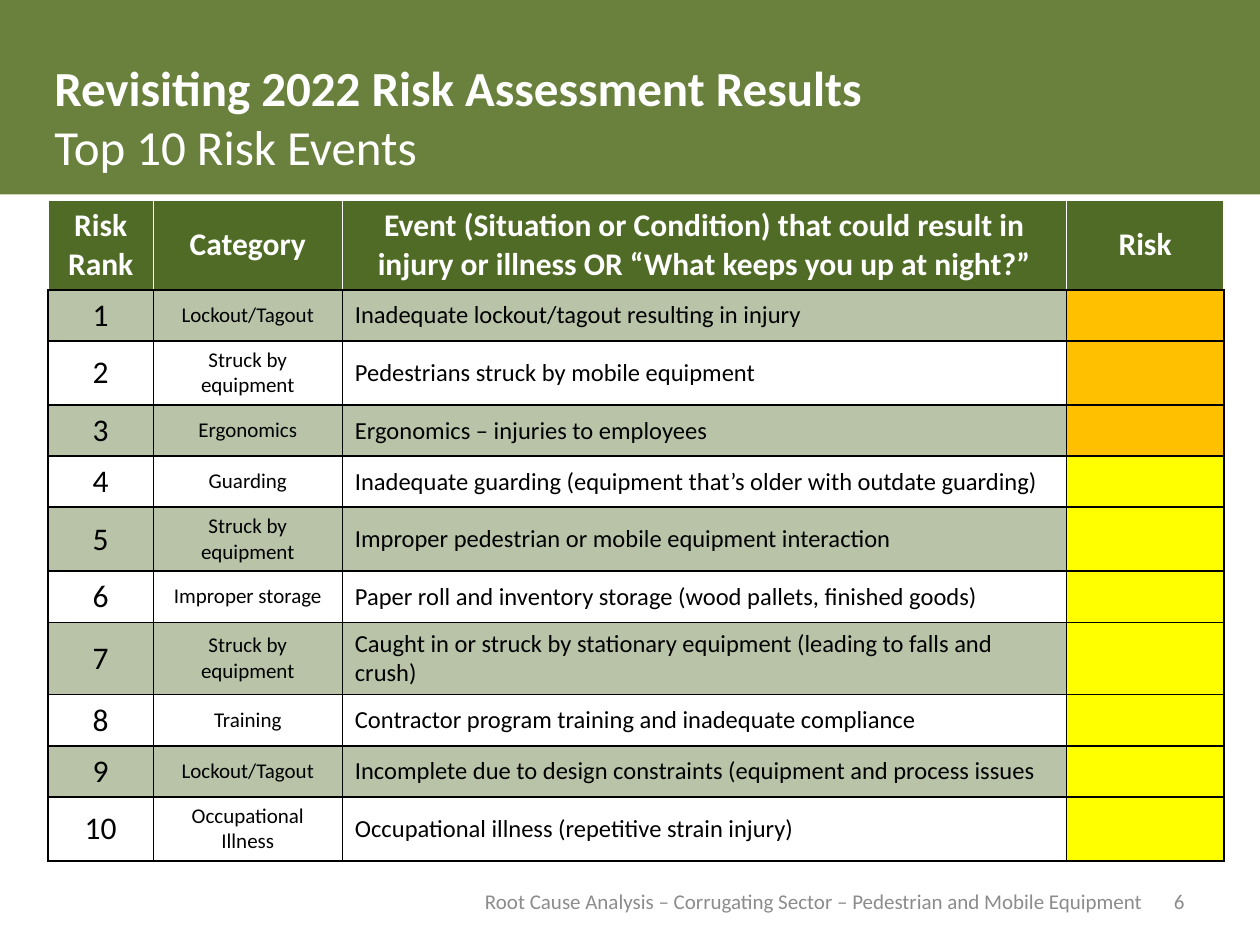
from dataclasses import dataclass

from lxml import etree
from pptx import Presentation
from pptx.dml.color import RGBColor
from pptx.enum import shapes, text
from pptx.oxml import ns
from pptx.util import Cm, Pt

FONT = "Calibri"
WHITE = RGBColor(0xFF, 0xFF, 0xFF)
BLACK = RGBColor(0x00, 0x00, 0x00)
GRAY = RGBColor(0x8C, 0x8C, 0x8C)
BAND_GREEN = RGBColor(0x69, 0x81, 0x3C)
TABLE_GREEN = RGBColor(0x50, 0x6B, 0x26)
ORANGE = RGBColor(0xFF, 0xC0, 0x00)
YELLOW = RGBColor(0xFF, 0xFF, 0x00)

CENTER = text.PP_ALIGN.CENTER
LEFT = text.PP_ALIGN.LEFT
RIGHT = text.PP_ALIGN.RIGHT

COLUMN_WIDTHS = (2.12, 3.81, 14.6, 3.17)
HEADER_HEIGHT = 1.8
ROW_HEIGHT = 1.03
TWO_LINE_HEIGHT = 1.29
HEADINGS = (
    "Risk Rank",
    "Category",
    "Event (Situation or Condition) that could result in injury or illness "
    "OR “What keeps you up at night?”",
    "Risk",
)


@dataclass(frozen=True)
class RiskEvent:
    category: str
    event: str
    level: RGBColor = YELLOW
    height: float = ROW_HEIGHT


EVENTS = (
    RiskEvent("Lockout/Tagout", "Inadequate lockout/tagout resulting in injury", ORANGE),
    RiskEvent("Struck by equipment", "Pedestrians struck by mobile equipment",
              ORANGE, TWO_LINE_HEIGHT),
    RiskEvent("Ergonomics", "Ergonomics – injuries to employees", ORANGE),
    RiskEvent("Guarding", "Inadequate guarding (equipment that’s older with outdate guarding)"),
    RiskEvent("Struck by equipment", "Improper pedestrian or mobile equipment interaction",
              height=TWO_LINE_HEIGHT),
    RiskEvent("Improper storage", "Paper roll and inventory storage (wood pallets, finished goods)"),
    RiskEvent("Struck by equipment",
              "Caught in or struck by stationary equipment (leading to falls and crush)",
              height=1.46),
    RiskEvent("Training", "Contractor program training and inadequate compliance"),
    RiskEvent("Lockout/Tagout", "Incomplete due to design constraints (equipment and process issues"),
    RiskEvent("Occupational Illness", "Occupational illness (repetitive strain injury)",
              height=TWO_LINE_HEIGHT),
)


def style_text(frame, size: float, color: RGBColor, align, bold: bool = False) -> None:
    for paragraph in frame.paragraphs:
        paragraph.alignment = align
        for run in paragraph.runs:
            run.font.name = FONT
            run.font.size = Pt(size)
            run.font.bold = bold
            run.font.color.rgb = color


def set_borders(cell, sides: RGBColor, top: RGBColor, bottom: RGBColor) -> None:
    properties = cell._tc.get_or_add_tcPr()
    edges = {"a:lnL": sides, "a:lnR": sides, "a:lnT": top, "a:lnB": bottom}
    for position, (tag, color) in enumerate(edges.items()):
        line = etree.Element(ns.qn(tag), w=str(Pt(1)))
        fill = etree.SubElement(line, ns.qn("a:solidFill"))
        etree.SubElement(fill, ns.qn("a:srgbClr"), val=str(color))
        properties.insert(position, line)


def fill_cell(cell, color: RGBColor, opacity: int = 100) -> None:
    cell.fill.solid()
    cell.fill.fore_color.rgb = color
    if opacity < 100:
        swatch = cell._tc.tcPr.find(".//" + ns.qn("a:srgbClr"))
        etree.SubElement(swatch, ns.qn("a:alpha"), val=str(opacity * 1000))


def write_cell(cell, words: str, size: float, color: RGBColor, align, bold: bool = False) -> None:
    cell.text_frame.text = words
    cell.vertical_anchor = text.MSO_ANCHOR.MIDDLE
    style_text(cell.text_frame, size, color, align, bold)


def add_title(slide) -> None:
    band = slide.shapes.add_shape(
        shapes.MSO_SHAPE.RECTANGLE, Cm(0), Cm(-0.1), Cm(25.4), Cm(4.02))
    band.shadow.inherit = False
    band.fill.solid()
    band.fill.fore_color.rgb = BAND_GREEN
    band.line.fill.background()
    slide.shapes._spTree.insert(2, band._element)

    title = slide.shapes.title
    title.left, title.top, title.width, title.height = Cm(0.84), Cm(0.76), Cm(23.7), Cm(3.18)
    frame = title.text_frame
    frame.text = "Revisiting 2022 Risk Assessment Results\vTop 10 Risk Events"
    frame.vertical_anchor = text.MSO_ANCHOR.MIDDLE
    style_text(frame, 28, WHITE, LEFT)
    frame.paragraphs[0].runs[0].font.bold = True


def add_risk_table(slide) -> None:
    heights = [HEADER_HEIGHT] + [event.height for event in EVENTS]
    table = slide.shapes.add_table(
        len(heights), len(COLUMN_WIDTHS), Cm(0.97), Cm(4.04),
        Cm(sum(COLUMN_WIDTHS)), Cm(sum(heights))).table
    table.horz_banding = False
    for column, width in zip(table.columns, COLUMN_WIDTHS):
        column.width = Cm(width)
    for row, height in zip(table.rows, heights):
        row.height = Cm(height)

    for column, heading in enumerate(HEADINGS):
        cell = table.cell(0, column)
        write_cell(cell, heading, 18, WHITE, CENTER, bold=True)
        fill_cell(cell, TABLE_GREEN)
        set_borders(cell, WHITE, WHITE, BLACK)

    for rank, event in enumerate(EVENTS, start=1):
        rank_cell, category_cell, event_cell, level_cell = table.rows[rank].cells
        write_cell(rank_cell, str(rank), 18, BLACK, CENTER)
        write_cell(category_cell, event.category, 12, BLACK, CENTER)
        write_cell(event_cell, event.event, 14, BLACK, LEFT)
        for cell in (rank_cell, category_cell, event_cell):
            fill_cell(cell, TABLE_GREEN if rank % 2 else WHITE, 40)
        fill_cell(level_cell, event.level)
        for cell in table.rows[rank].cells:
            set_borders(cell, BLACK, BLACK, BLACK)


def add_footer(slide, words: str, left: float, width: float, align) -> None:
    footer = slide.shapes.add_textbox(Cm(left), Cm(17.65), Cm(width), Cm(1.02))
    frame = footer.text_frame
    frame.word_wrap = True
    frame.vertical_anchor = text.MSO_ANCHOR.MIDDLE
    frame.text = words
    style_text(frame, 12, GRAY, align)


def main() -> None:
    deck = Presentation()
    deck.slide_width, deck.slide_height = Cm(25.4), Cm(19.05)
    slide = deck.slides.add_slide(deck.slide_layouts[5])
    add_title(slide)
    add_risk_table(slide)
    add_footer(slide, "6", 18.2, 5.93, RIGHT)
    add_footer(
        slide, "Root Cause Analysis – Corrugating Sector – Pedestrian and Mobile Equipment",
        8.26, 16.3, CENTER)
    deck.save("out.pptx")


if __name__ == "__main__":
    main()
